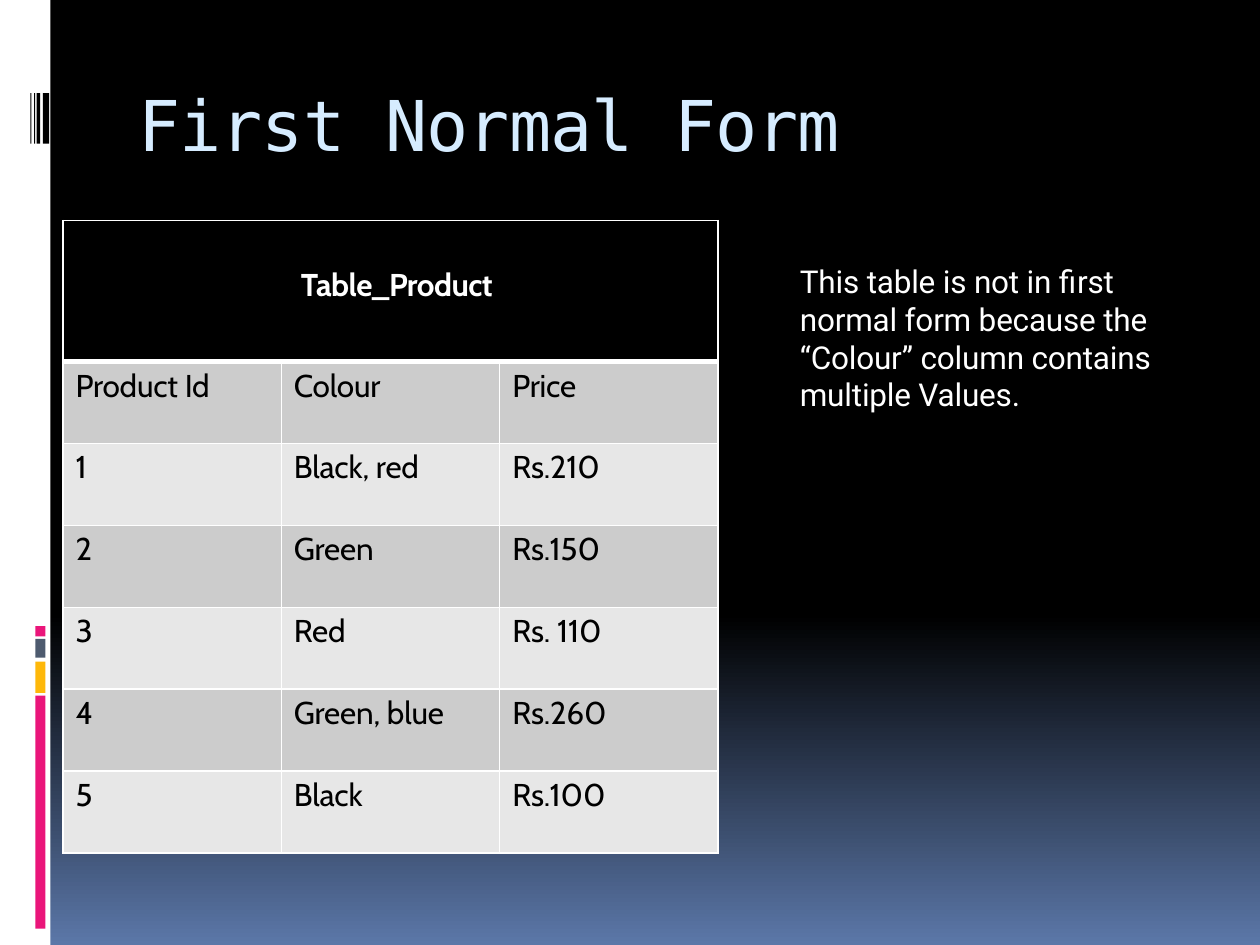
from lxml import etree
from pptx import Presentation
from pptx.dml.color import RGBColor
from pptx.enum import shapes, text
from pptx.oxml import ns
from pptx.util import Inches, Pt


class Theme:
    white, black = "FFFFFF", "000000"
    title, sky = "D6ECFF", "5B77A8"
    pink, amber, slate = "EA157A", "FEB80A", "4E5B6F"
    bands = ("CCCCCC", "E7E7E7")
    title_font, table_font, body_font = "DejaVu Sans Mono", "Cabin", "Roboto"
    title_size, body_size = 40, 18


def style_text(p, font, size, color, spacing, bold=False):
    for r in p.runs:
        r.font.name, r.font.size, r.font.bold = font, Pt(size), bold
        r.font.color.rgb = RGBColor.from_string(color)
        r._r.get_or_add_rPr().set("spc", str(round(spacing * 100)))


def fill_cell(cell, color, bottom=1):
    # Borders must come before the fill in the cell properties
    tcPr = cell._tc.get_or_add_tcPr()
    for side, width in (("L", 1), ("R", 1), ("T", 1), ("B", bottom)):
        ln = etree.SubElement(tcPr, ns.qn(f"a:ln{side}"), w=str(Pt(width)))
        solid = etree.SubElement(ln, ns.qn("a:solidFill"))
        etree.SubElement(solid, ns.qn("a:srgbClr"), val=Theme.white)
    cell.fill.solid()
    cell.fill.fore_color.rgb = RGBColor.from_string(color)


prs = Presentation()
prs.slide_width, prs.slide_height = Inches(10), Inches(7.5)
s = prs.slides.add_slide(prs.slide_layouts[6])

# Background: black fading to blue at the foot
bg = s.background.fill
bg.gradient()
bg.gradient_angle = 270
for stop, position, color in zip(bg.gradient_stops, (0.65, 1), (Theme.black, Theme.sky)):
    stop.position = position
    stop.color.rgb = RGBColor.from_string(color)

# Side strip with its coloured blocks and black bars
strip = [(0, 0, 0.4, 7.5, Theme.white)]
strip += [(0.28, y, 0.08, h, color) for y, h, color in (
    (5.52, 1.85, Theme.pink), (5.25, 0.25, Theme.amber),
    (5.07, 0.15, Theme.slate), (4.97, 0.08, Theme.pink))]
strip += [(x, 0.74, w, 0.4, Theme.black) for x, w in (
    (0.34, 0.05), (0.29, 0.03), (0.27, 0.01), (0.24, 0.01))]
for x, y, w, h, color in strip:
    sp = s.shapes.add_shape(shapes.MSO_SHAPE.RECTANGLE,
                            Inches(x), Inches(y), Inches(w), Inches(h))
    sp.shadow.inherit = False
    sp.fill.solid()
    sp.fill.fore_color.rgb = RGBColor.from_string(color)
    sp.line.fill.background()

# Title and explanation
note = ("This table is not in first normal form because the "
        "“Colour” column contains multiple Values.")
for words, box, top, font, size, color, spacing in (
        ("First Normal Form", (1, 0.56, 8.5, 1), 0.09,
         Theme.title_font, Theme.title_size, Theme.title, -0.5),
        (note, (6.25, 2.03, 3.2, 1.62), 0.05,
         Theme.body_font, Theme.body_size, Theme.white, -0.1)):
    tf = s.shapes.add_textbox(*(Inches(v) for v in box)).text_frame
    tf.word_wrap = True
    tf.margin_top = Inches(top)
    tf.text = words
    style_text(tf.paragraphs[0], font, size, color, spacing)

# Product table
products = [
    ("Product Id", "Colour", "Price"),
    ("1", "Black, red", "Rs.210"),
    ("2", "Green", "Rs.150"),
    ("3", "Red", "Rs. 110"),
    ("4", "Green, blue", "Rs.260"),
    ("5", "Black", "Rs.100"),
]
table = s.shapes.add_table(len(products) + 1, 3, Inches(0.5), Inches(1.75),
                           Inches(5.2), Inches(5.02)).table
for column in table.columns:
    column.width = Inches(5.2 / 3)
for row in table.rows:
    row.height = Inches(0.65)
table.rows[0].height = Inches(1.12)

# Merged heading row
heading = table.cell(0, 0)
heading.merge(table.cell(0, 2))
for col in range(3):
    fill_cell(table.cell(0, col), Theme.black, bottom=3)
heading.text_frame.text = "Table_Product"
heading.vertical_anchor = text.MSO_ANCHOR.MIDDLE
heading.margin_left, heading.margin_bottom = Inches(0.2), Inches(0.15)
p = heading.text_frame.paragraphs[0]
p.alignment = text.PP_ALIGN.CENTER
style_text(p, Theme.table_font, Theme.body_size, Theme.white, -0.3, bold=True)

# Banded body rows
for i, product in enumerate(products):
    for col, value in enumerate(product):
        cell = table.cell(i + 1, col)
        fill_cell(cell, Theme.bands[i % 2])
        cell.margin_left, cell.margin_top = Inches(0.1), Inches(0.04)
        cell.margin_right = cell.margin_bottom = 0
        cell.text_frame.text = value
        p = cell.text_frame.paragraphs[0]
        p.space_before = Pt(3.1)
        style_text(p, Theme.table_font, Theme.body_size, Theme.black, -0.1)

prs.save("out.pptx")
